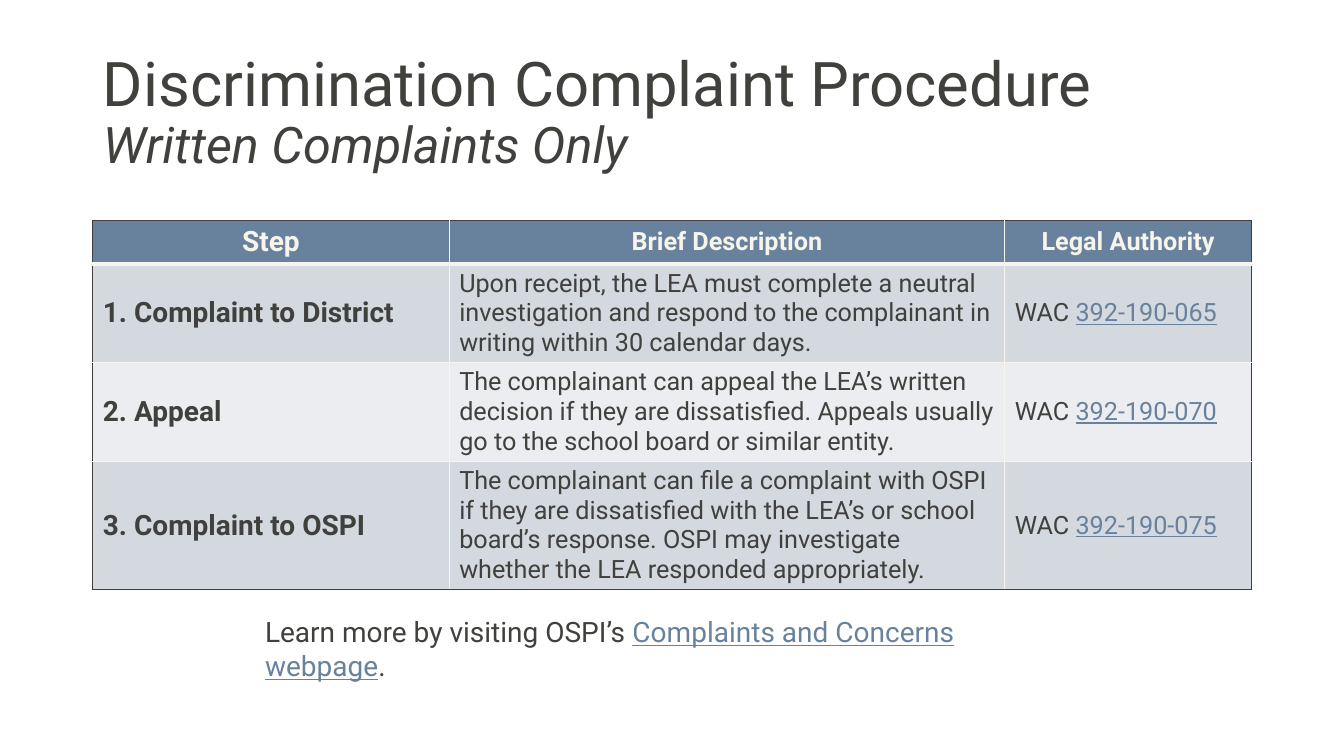
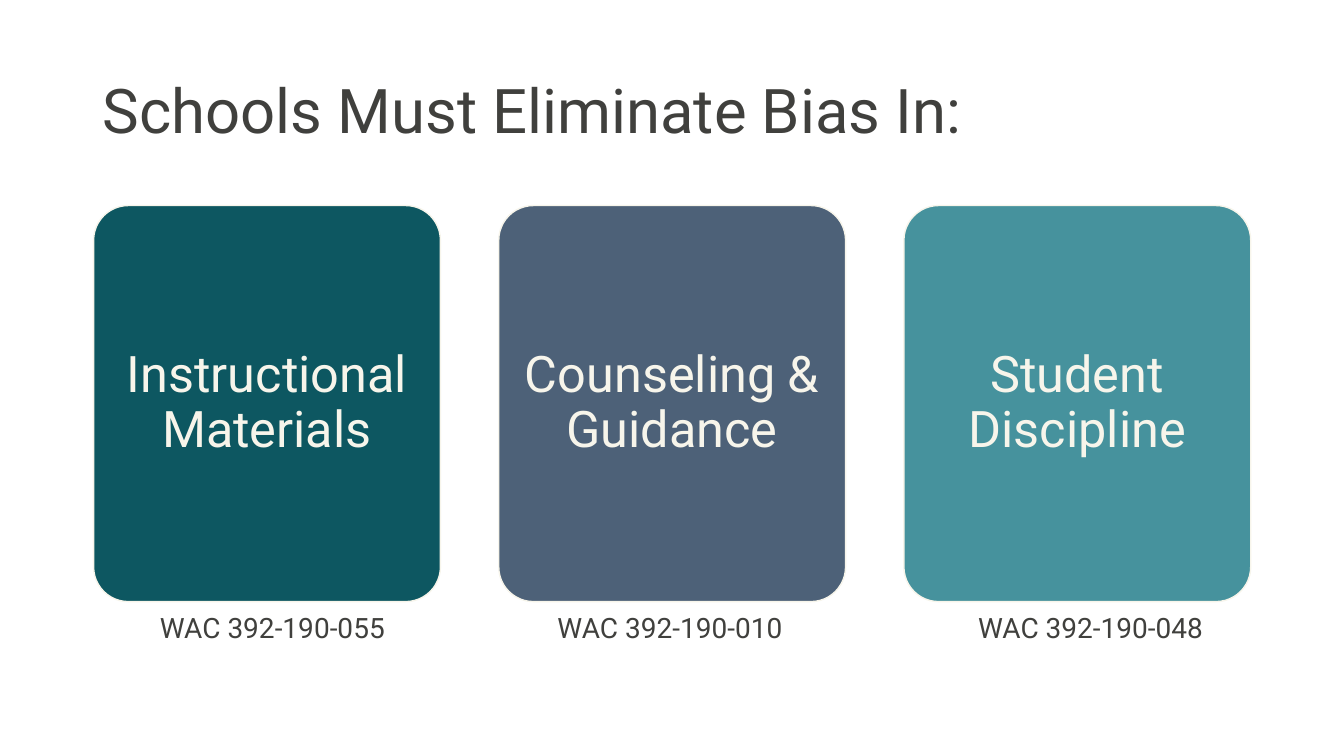
from lxml import etree
from pptx import Presentation
from pptx.dml.color import RGBColor
from pptx.enum.shapes import MSO_SHAPE
from pptx.enum.text import MSO_ANCHOR, MSO_AUTO_SIZE, PP_ALIGN
from pptx.oxml.ns import qn
from pptx.util import Cm, Pt

LEFT, CENTER = PP_ALIGN.LEFT, PP_ALIGN.CENTER
MIDDLE, TOP = MSO_ANCHOR.MIDDLE, MSO_ANCHOR.TOP
ROUNDED = MSO_SHAPE.ROUNDED_RECTANGLE
NO_AUTOFIT = MSO_AUTO_SIZE.NONE
FONT = "Roboto"
COLORS = {
    "text": "40403D", "cream": "F7F5EB", "blue": "68829E",
    "band_dark": "D4D8DF", "band_light": "EBEDF0",
    "teal": "0D5761", "slate": "4D6178", "aqua": "46929D",
}
TITLE_BOX = (2.34, 1.02, 29.2, 3.68)

# Content: a run is (text, is_link)
PROCEDURE_TITLE = ("Discrimination Complaint Procedure", "Written Complaints Only")
HEADERS = ["Step", "Brief Description", "Legal Authority"]
STEPS = [
    ("1. Complaint to District",
     "Upon receipt, the LEA must complete a neutral investigation and respond "
     "to the complainant in writing within 30 calendar days.",
     "392-190-065"),
    ("2. Appeal",
     "The complainant can appeal the LEA’s written decision if they are "
     "dissatisfied. Appeals usually go to the school board or similar entity.",
     "392-190-070"),
    ("3. Complaint to OSPI",
     "The complainant can file a complaint with OSPI if they are dissatisfied "
     "with the LEA’s or school board’s response. OSPI may investigate whether "
     "the LEA responded appropriately.",
     "392-190-075"),
]
LEARN_MORE = [("Learn more by visiting OSPI’s ", False),
              ("Complaints and Concerns webpage", True), (".", False)]
BIAS_TITLE = ("Schools Must Eliminate Bias In:",)
# Area, card colour, rule, left edge of the rule caption
BIAS_AREAS = [
    ("Instructional Materials", "teal", "WAC 392-190-055", 3.78),
    ("Counseling & Guidance", "slate", "WAC 392-190-010", 13.8),
    ("Student Discipline", "aqua", "WAC 392-190-048", 24.4),
]

# Layout in centimetres
COLUMN_WIDTHS = [8.98, 14.0, 6.22]
ROW_HEIGHTS = [1.07, 2.49, 2.49, 3.23]
CARD_LEFT, CARD_TOP, CARD_WIDTH, CARD_HEIGHT, CARD_PITCH = 2.36, 5.18, 8.74, 9.98, 10.21


def rgb(name):
    return RGBColor.from_string(COLORS[name])


def style(font, size, color="text", bold=False):
    font.name, font.size, font.bold = FONT, Pt(size), bold
    font.color.rgb = rgb(color)


def write(frame, runs, size, color="text", align=LEFT, bold=False):
    paragraph = frame.paragraphs[0]
    paragraph.alignment = align
    style(paragraph.font, size, color, bold)
    for text, is_link in runs:
        run = paragraph.add_run()
        run.text = text
        if is_link:
            run.font.underline = True
            run.font.color.rgb = rgb("blue")
    return paragraph


def add_titled_slide(presentation, lines):
    slide = presentation.slides.add_slide(presentation.slide_layouts[5])
    title = slide.shapes.title
    title.left, title.top, title.width, title.height = map(Cm, TITLE_BOX)
    frame = title.text_frame
    frame.auto_size, frame.vertical_anchor = NO_AUTOFIT, MIDDLE
    paragraph = write(frame, [(lines[0], False)], 44)
    paragraph.line_spacing = 0.9
    for subtitle in lines[1:]:
        paragraph.add_line_break()
        run = paragraph.add_run()
        run.text = subtitle
        run.font.size, run.font.italic = Pt(36), True
    return slide


def add_text(slide, left, top, width, runs):
    box = slide.shapes.add_textbox(Cm(left), Cm(top), Cm(width), Cm(1.12))
    box.text_frame.word_wrap = True
    box.text_frame.vertical_anchor = TOP
    write(box.text_frame, runs, 20)


def set_borders(cell, borders):
    properties = cell._tc.get_or_add_tcPr()
    for index, (side, color, width) in enumerate(borders):
        line = etree.Element(qn(f"a:ln{side}"), w=str(Pt(width)))
        fill = etree.SubElement(line, qn("a:solidFill"))
        etree.SubElement(fill, qn("a:srgbClr"), val=COLORS[color])
        properties.insert(index, line)


def add_steps_table(slide):
    rows = [[[(header, False)] for header in HEADERS]]
    rows += [[[(step, False)], [(description, False)], [("WAC ", False), (rule, True)]]
             for step, description, rule in STEPS]
    last_row, last_column = len(rows) - 1, len(HEADERS) - 1
    table = slide.shapes.add_table(
        len(rows), len(HEADERS), Cm(2.34), Cm(5.56),
        Cm(sum(COLUMN_WIDTHS)), Cm(sum(ROW_HEIGHTS))).table
    for column, width in zip(table.columns, COLUMN_WIDTHS):
        column.width = Cm(width)
    for r, (row, height) in enumerate(zip(rows, ROW_HEIGHTS)):
        table.rows[r].height = Cm(height)
        is_header = r == 0
        fill = "blue" if is_header else ("band_light", "band_dark")[r % 2]
        for c, runs in enumerate(row):
            cell = table.cell(r, c)
            cell.vertical_anchor = MIDDLE
            cell.fill.solid()
            cell.fill.fore_color.rgb = rgb(fill)
            write(cell.text_frame, runs, 20 if c == 0 else 18,
                  "cream" if is_header else "text",
                  CENTER if is_header else LEFT, is_header or c == 0)
            # Dark outer frame, cream inner lines, heavy rule below the header
            set_borders(cell, [
                ("L", "text" if c == 0 else "cream", 1),
                ("R", "text" if c == last_column else "cream", 1),
                ("T", "text" if is_header else "cream", 3 if r == 1 else 1),
                ("B", "text" if r == last_row else "cream", 3 if is_header else 1),
            ])


def add_card(slide, left, label, color):
    card = slide.shapes.add_shape(
        ROUNDED, Cm(left), Cm(CARD_TOP), Cm(CARD_WIDTH), Cm(CARD_HEIGHT))
    card.adjustments[0] = 0.1
    card.shadow.inherit = False
    card.fill.solid()
    card.fill.fore_color.rgb = rgb(color)
    card.line.color.rgb = rgb("cream")
    card.line.width = Pt(1)
    frame = card.text_frame
    frame.word_wrap, frame.vertical_anchor = True, MIDDLE
    frame.margin_left = frame.margin_right = Cm(0.35)
    write(frame, [(label, False)], 36, "cream", CENTER).line_spacing = 0.9


def main():
    presentation = Presentation()
    presentation.slide_width, presentation.slide_height = Cm(33.87), Cm(19.05)

    # Complaint procedure
    slide = add_titled_slide(presentation, PROCEDURE_TITLE)
    add_steps_table(slide)
    add_text(slide, 6.43, 15.37, 20.9, LEARN_MORE)

    # Areas where bias must be eliminated
    slide = add_titled_slide(presentation, BIAS_TITLE)
    for index, (label, color, rule, caption_left) in enumerate(BIAS_AREAS):
        add_card(slide, CARD_LEFT + index * CARD_PITCH, label, color)
        add_text(slide, caption_left, 15.27, 6.5, [(rule, False)])

    presentation.save("out.pptx")


if __name__ == "__main__":
    main()
